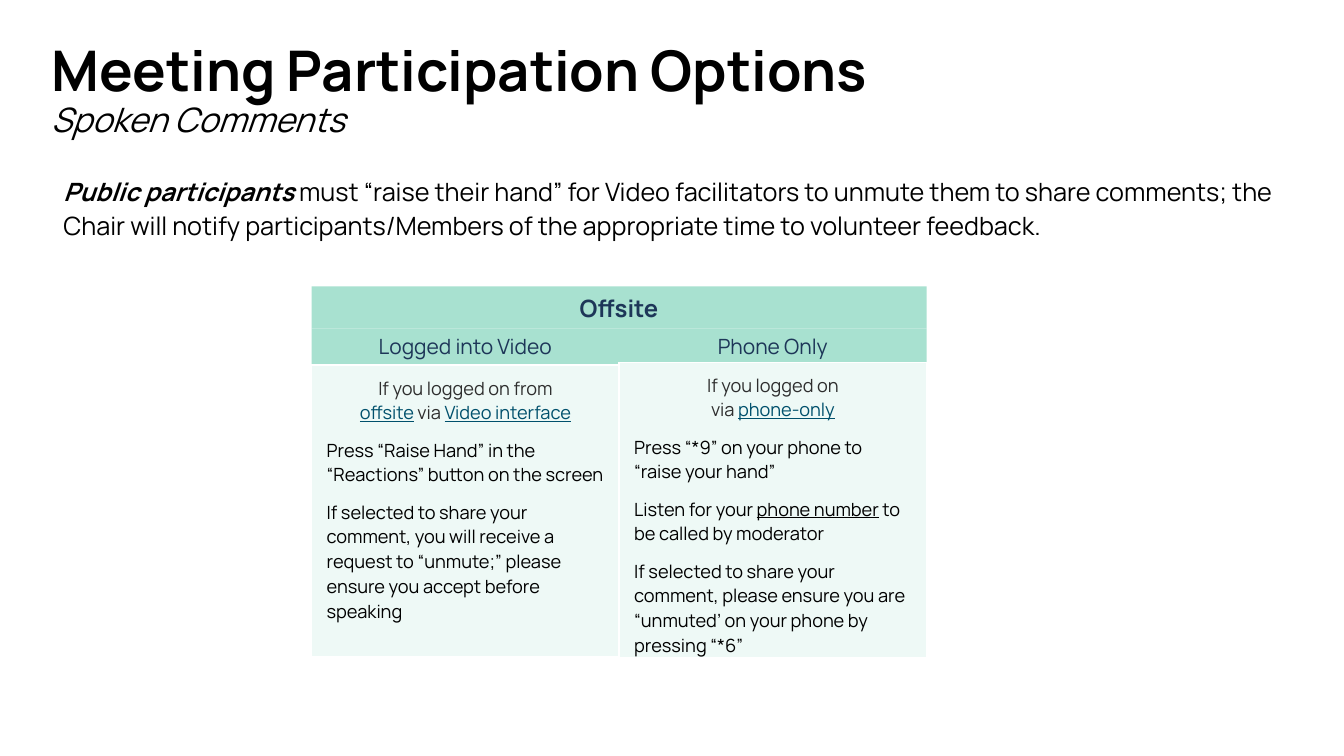
"""Build the meeting participation slide on spoken comments."""
import pptx
import pptx.dml.color
import pptx.enum.shapes
import pptx.enum.text
import pptx.oxml.ns
import pptx.util
from lxml import etree

Inches = pptx.util.Inches
Pt = pptx.util.Pt
RGB = pptx.dml.color.RGBColor.from_string
ALIGN = pptx.enum.text.PP_ALIGN
ANCHOR = pptx.enum.text.MSO_ANCHOR
qn = pptx.oxml.ns.qn

THEME = {
    "font": "Manrope", "black": "000000", "navy": "1D3658", "gray": "2E2E2E",
    "link": "00506C", "mint": "A8E1D0", "pale": "EEF9F6", "white": "FFFFFF",
    "title": 40, "subtitle": 24, "intro": 18, "header": 17, "subheader": 15, "body": 13,
}

TITLE = [
    ("Meeting Participation Options\n", {"b": True}),
    ("Spoken Comments", {"i": True, "size": "subtitle"}),
]
INTRO = [
    ("Public participants ", {"b": True, "i": True}),
    ("must “raise their hand” for Video facilitators to unmute them to share comments; "
     "the Chair will notify participants/Members of the appropriate time to volunteer feedback.", {}),
]
HEADER = "Offsite"
GRAY = {"color": "gray"}
LINK = {"color": "link", "u": True}
COLUMNS = [
    {"name": "Logged into Video", "top": 3.63, "height": 2.9,
     "lead": [("If you logged on from\n", GRAY), ("offsite", LINK), (" via ", GRAY),
              ("Video interface", LINK)],
     "steps": [
         [("Press “Raise Hand” in the “Reactions” button on the screen", {})],
         [("If selected to share your comment, you will receive a request to “unmute;” "
           "please ensure you accept before speaking", {})]]},
    {"name": "Phone Only", "top": 3.6, "height": 2.94,
     "lead": [("If you logged on\n", GRAY), ("via ", GRAY), ("phone-only", LINK)],
     "steps": [
         [("Press “*9” on your phone to “raise your hand”", {})],
         [("Listen for your ", {}), ("phone number", {"u": True}),
          (" to be called by moderator", {})],
         [("If selected to share your comment, please ensure you are “unmuted’ "
           "on your phone by pressing “*6”", {})]]},
]
GRID_LEFT, GRID_TOP, COL_W = 3.09, 2.84, 3.05
HEADER_H, SUBHEADER_H = 0.42, 0.35
BORDERS = {"a:lnL": 1, "a:lnR": 1, "a:lnT": 1, "a:lnB": 3}


def style_run(r, size, color="black", b=False, i=False, u=False):
    f = r.font
    f.name, f.size, f.color.rgb = THEME["font"], Pt(THEME[size]), RGB(THEME[color])
    f.bold, f.italic, f.underline = b, i, u


def write_runs(p, runs, size):
    for text, style in runs:
        r = p.add_run()
        r.text = text.rstrip("\n")
        style_run(r, **{"size": size, **style})
        if text.endswith("\n"):
            p.add_line_break()
            br = p._p.findall(qn("a:br"))[-1]
            etree.SubElement(br, qn("a:rPr"), sz=str(THEME[size] * 100))


def add_text(s, box, runs, size, spacing, anchor):
    tf = s.shapes.add_textbox(*map(Inches, box)).text_frame
    tf.word_wrap, tf.vertical_anchor = True, anchor
    p = tf.paragraphs[0]
    p.line_spacing = spacing
    write_runs(p, runs, size)


def add_band(s, box, text, size, bold=False):
    sp = s.shapes.add_shape(pptx.enum.shapes.MSO_SHAPE.RECTANGLE, *map(Inches, box))
    sp.shadow.inherit = False
    sp.fill.solid()
    sp.fill.fore_color.rgb = RGB(THEME["mint"])
    sp.line.fill.background()
    tf = sp.text_frame
    tf.text, tf.vertical_anchor = text, ANCHOR.MIDDLE
    p = tf.paragraphs[0]
    p.alignment = ALIGN.CENTER
    style_run(p.runs[0], size, "navy", bold)


def add_panel(s, left, column):
    box = (left, column["top"], COL_W, column["height"])
    table = s.shapes.add_table(1, 1, *map(Inches, box)).table
    table.first_row = table.horz_banding = False
    cell = table.cell(0, 0)
    cell.margin_left = cell.margin_right = Inches(0.15)
    cell.margin_top = cell.margin_bottom = Inches(0.1)
    tcPr = cell._tc.get_or_add_tcPr()
    for tag, width in BORDERS.items():
        ln = etree.SubElement(tcPr, qn(tag), w=str(Pt(width)))
        fill = etree.SubElement(ln, qn("a:solidFill"))
        etree.SubElement(fill, qn("a:srgbClr"), val=THEME["white"])
    cell.fill.solid()
    cell.fill.fore_color.rgb = RGB(THEME["pale"])
    tf = cell.text_frame
    p = tf.paragraphs[0]
    p.alignment, p.space_after = ALIGN.CENTER, Pt(6)
    write_runs(p, column["lead"], "body")
    for step in column["steps"]:
        p = tf.add_paragraph()
        p.space_before, p.space_after = Pt(3), Pt(6)
        write_runs(p, step, "body")


def main():
    prs = pptx.Presentation()
    prs.slide_width, prs.slide_height = Inches(13.33), Inches(7.5)
    s = prs.slides.add_slide(prs.slide_layouts[6])
    add_text(s, (0.41, 0.18, 11.5, 1.45), TITLE, "title", 0.9, ANCHOR.MIDDLE)
    add_text(s, (0.53, 1.65, 12.2, 1.18), INTRO, "intro", 1.15, ANCHOR.TOP)
    add_band(s, (GRID_LEFT, GRID_TOP, COL_W * len(COLUMNS), HEADER_H), HEADER, "header", True)
    for n, column in enumerate(COLUMNS):
        left = GRID_LEFT + n * COL_W
        add_band(s, (left, GRID_TOP + HEADER_H, COL_W, SUBHEADER_H), column["name"], "subheader")
        add_panel(s, left, column)
    prs.save("out.pptx")


if __name__ == "__main__":
    main()
